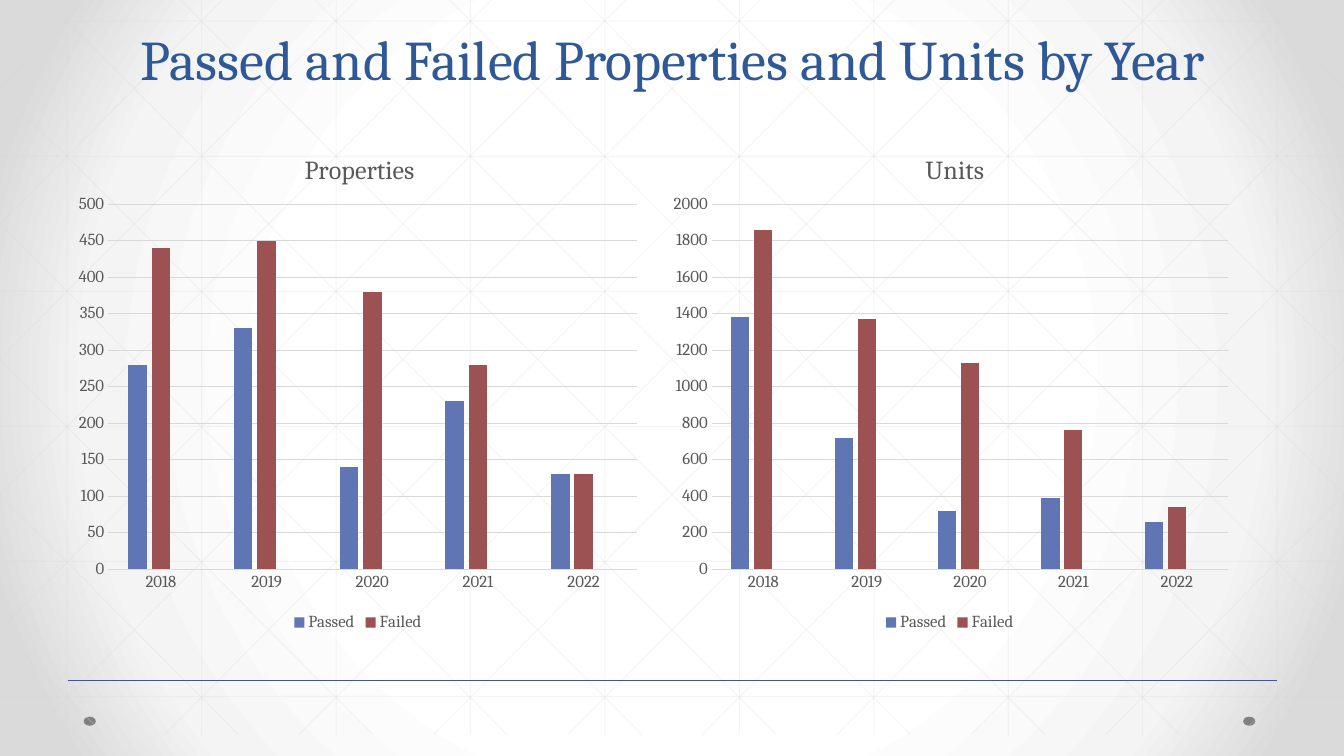
from pptx import Presentation
from pptx.chart.data import CategoryChartData
from pptx.dml.color import RGBColor
from pptx.enum.chart import XL_CHART_TYPE, XL_LEGEND_POSITION, XL_TICK_MARK
from pptx.enum.shapes import MSO_CONNECTOR, MSO_SHAPE
from pptx.enum.text import MSO_ANCHOR, PP_ALIGN
from pptx.oxml import parse_xml
from pptx.oxml.ns import nsdecls, qn
from pptx.util import Inches, Pt

FONT = "Cambria"
WIDTH, HEIGHT = 13.33, 7.5
GRID_TOP, GRID_BOTTOM = -0.21, 7.29
STEP = 4 / 3
DIAGONAL_RUN = 7.45
YEARS = ["2018", "2019", "2020", "2021", "2022"]
SERIES_COLORS = ["6076B4", "9C5252", "E68422"]


def rgb(color):
    """Turn a hex string into a colour."""
    return RGBColor.from_string(color)


def set_font(font, size, color):
    """Set typeface, size and colour."""
    font.name = FONT
    font.size = Pt(size)
    font.color.rgb = rgb(color)


def add_background(s):
    """Fill the slide with a circular gradient."""
    stops = "".join(
        f'<a:gs pos="{pos}000"><a:srgbClr val="{color}"/></a:gs>'
        for pos, color in [(50, "FFFFFF"), (76, "F4F4F4"), (92, "DADADA")])
    s.element.cSld.insert(0, parse_xml(
        f'<p:bg {nsdecls("p", "a")}><p:bgPr><a:gradFill><a:gsLst>{stops}</a:gsLst>'
        '<a:path path="circle"><a:fillToRect l="50000" t="50000" r="50000" b="50000"/>'
        '</a:path></a:gradFill><a:effectLst/></p:bgPr></p:bg>'))


def add_line(s, x1, y1, x2, y2, color="D9D9D9", width=0.75, alpha=25):
    """Draw a straight line with the given opacity in percent."""
    c = s.shapes.add_connector(MSO_CONNECTOR.STRAIGHT,
                               Inches(x1), Inches(y1), Inches(x2), Inches(y2))
    c.line.color.rgb = rgb(color)
    c.line.width = Pt(width)
    sp_pr = c.element.spPr
    if alpha < 100:
        sp_pr.find(".//" + qn("a:srgbClr")).append(
            parse_xml(f'<a:alpha {nsdecls("a")} val="{alpha}000"/>'))
    sp_pr.append(parse_xml(f'<a:effectLst {nsdecls("a")}/>'))


def add_grid(s):
    """Draw the faint upright, level and diagonal lines."""
    for i in range(10):
        x = STEP * (i + 0.5)
        add_line(s, x, GRID_TOP, x, GRID_BOTTOM)
    for i in range(6):
        y = 0.21 + 1.34 * i
        add_line(s, 0, y, WIDTH, y)
    slope = (GRID_BOTTOM - GRID_TOP) / DIAGONAL_RUN
    for i in range(-5, 10):
        x = 0.25 + STEP * i
        x1, x2 = max(0, x), min(WIDTH, x + DIAGONAL_RUN)
        y1, y2 = (GRID_TOP + (end - x) * slope for end in (x1, x2))
        add_line(s, x1, y1, x2, y2)
        add_line(s, WIDTH - x1, y1, WIDTH - x2, y2)


def add_dot(s, x):
    """Draw a small grey footer dot."""
    sp = s.shapes.add_shape(MSO_SHAPE.OVAL, Inches(x), Inches(7.11),
                            Inches(0.12), Inches(0.09))
    sp.shadow.inherit = False
    sp.fill.solid()
    sp.fill.fore_color.rgb = rgb("808080")
    sp.line.fill.background()


def add_title(s, text):
    """Write the slide title."""
    tf = s.shapes.add_textbox(Inches(0.67), Inches(0),
                              Inches(12), Inches(0.96)).text_frame
    tf.word_wrap = True
    tf.vertical_anchor = MSO_ANCHOR.BOTTOM
    p = tf.paragraphs[0]
    p.text = text
    p.alignment = PP_ALIGN.CENTER
    p.line_spacing = Pt(58)
    set_font(p.runs[0].font, 40, "2F5897")


def place(element, index, target="", **fractions):
    """Give a chart element a fixed place, as fractions of the chart."""
    for old in element.findall(qn("c:layout")):
        element.remove(old)
    sizes = "".join(f'<c:{k} val="{v}"/>' for k, v in fractions.items())
    element.insert(index, parse_xml(
        f'<c:layout {nsdecls("c")}><c:manualLayout>{target}<c:xMode val="edge"/>'
        f'<c:yMode val="edge"/>{sizes}</c:manualLayout></c:layout>'))


def style_axis(axis):
    """Set the labels of an axis and drop its tick marks."""
    axis.major_tick_mark = axis.minor_tick_mark = XL_TICK_MARK.NONE
    set_font(axis.tick_labels.font, 12, "595959")


def style_line(line):
    """Make a chart line thin and light grey."""
    line.color.rgb = rgb("D9D9D9")
    line.width = Pt(0.75)


def add_chart(s, x, title, title_x, plot_x, plot_w, passed, failed, top, unit):
    """Add a clustered column chart of passed and failed counts."""
    data = CategoryChartData()
    data.categories = YEARS
    data.add_series("Passed", passed)
    data.add_series("Failed", failed)
    data.add_series("Series 3", [None] * len(YEARS))
    chart = s.shapes.add_chart(XL_CHART_TYPE.COLUMN_CLUSTERED, Inches(x), Inches(1.21),
                               Inches(5.76), Inches(5.1), data).chart
    set_font(chart.font, 10, "000000")

    tf = chart.chart_title.text_frame
    tf.text = title
    r = tf.paragraphs[0].runs[0]
    set_font(r.font, 18.6, "595959")
    r.font.bold = False

    plot = chart.plots[0]
    plot.gap_width, plot.overlap = 219, -27
    plot.vary_by_categories = False
    for series, color in zip(plot.series, SERIES_COLORS):
        series.format.fill.solid()
        series.format.fill.fore_color.rgb = rgb(color)

    years, counts = chart.category_axis, chart.value_axis
    style_axis(years)
    style_axis(counts)
    counts.minimum_scale, counts.maximum_scale = 0, top
    counts.major_unit = unit
    counts.format.line.fill.background()
    style_line(years.format.line)
    style_line(counts.major_gridlines.format.line)

    chart.has_legend = True
    chart.legend.position = XL_LEGEND_POSITION.BOTTOM
    chart.legend.include_in_layout = False
    set_font(chart.legend.font, 12, "595959")

    root = chart.element
    root.find(".//" + qn("c:legend")).insert(1, parse_xml(
        f'<c:legendEntry {nsdecls("c")}><c:idx val="2"/><c:delete val="1"/></c:legendEntry>'))
    place(root.find(".//" + qn("c:title")), 1, x=title_x, y=0.05)
    place(root.find(".//" + qn("c:plotArea")), 0, '<c:layoutTarget val="inner"/>',
          x=plot_x, y=0.16, w=plot_w, h=0.71)


def main():
    """Build and save the slide."""
    prs = Presentation()
    prs.slide_width, prs.slide_height = Inches(WIDTH), Inches(HEIGHT)
    s = prs.slides.add_slide(prs.slide_layouts[6])
    add_background(s)
    for x in (12.33, 0.83):
        add_dot(s, x)
    add_grid(s)
    add_line(s, 0.67, 6.75, 12.67, 6.75, "42568D", 1, 100)
    add_title(s, "Passed and Failed Properties and Units by Year")
    add_chart(s, 0.67, "Properties", 0.4, 0.07, 0.91,
              [280, 330, 140, 230, 130], [440, 450, 380, 280, 130], 500, 50)
    add_chart(s, 6.54, "Units", 0.45, 0.09, 0.89,
              [1380, 720, 320, 390, 260], [1860, 1370, 1130, 760, 340], 2000, 200)
    prs.save("out.pptx")


if __name__ == "__main__":
    main()
